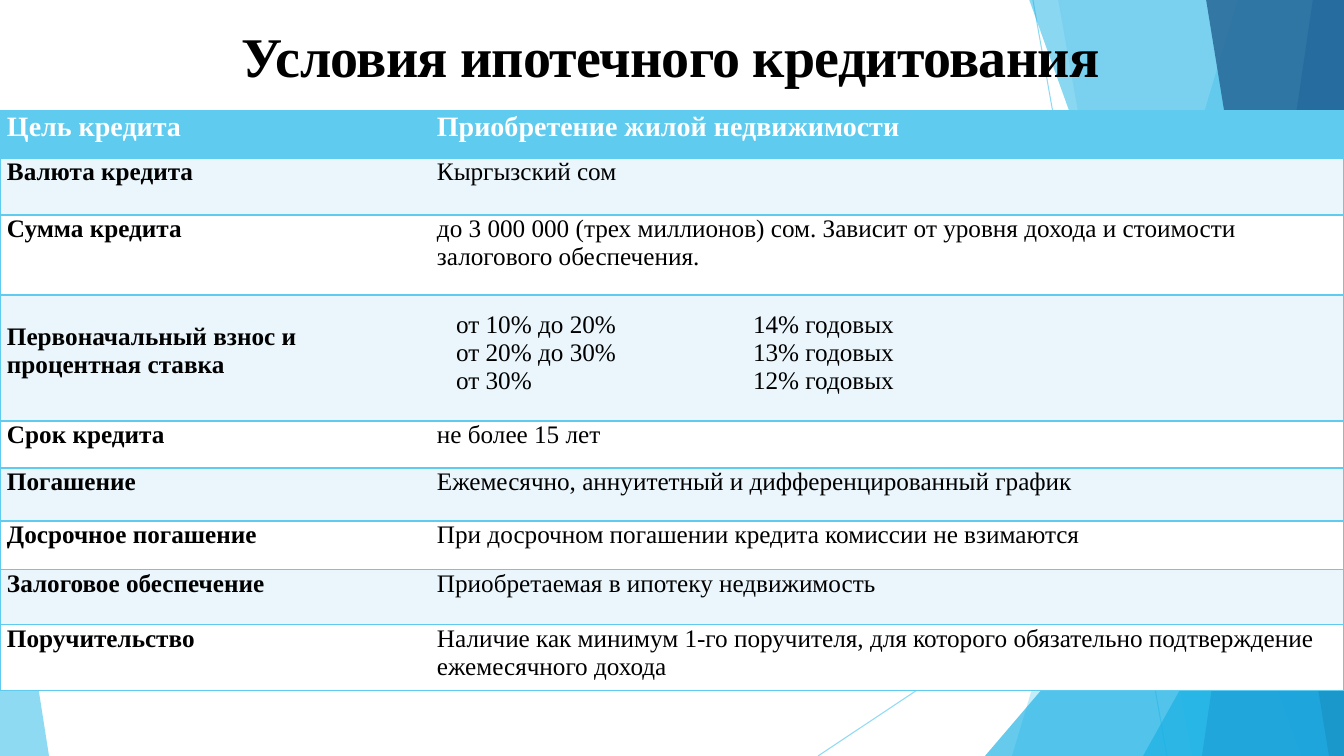
from lxml import etree
from pptx import Presentation
from pptx.dml.color import RGBColor
from pptx.enum.shapes import MSO_CONNECTOR, MSO_SHAPE
from pptx.enum.text import MSO_ANCHOR, PP_ALIGN
from pptx.oxml.ns import qn
from pptx.util import Emu, Pt

STRAIGHT = MSO_CONNECTOR.STRAIGHT
TRIANGLE = MSO_SHAPE.ISOSCELES_TRIANGLE
BOTTOM = MSO_ANCHOR.BOTTOM
LEFT, CENTER = PP_ALIGN.LEFT, PP_ALIGN.CENTER

WIDTH, HEIGHT = 1344, 756
EMU_PER_PX = 12192000 / WIDTH
FONT = "Times New Roman"
SKY, BLUE, BLACK, WHITE, PALE = "5FCBEF", "17B0E4", "000000", "FFFFFF", "EAF6FC"
NO_STYLE = "{2D5ABB26-0587-4C30-8999-92F81FD0307C}"
LABEL_WITH_GAP = "Первоначальный взнос и процентная ставка"

CONDITIONS = [
    (47, "Цель кредита", "Приобретение жилой недвижимости"),
    (57, "Валюта кредита", "Кыргызский сом"),
    (80, "Сумма кредита",
     "до 3 000 000 (трех миллионов) сом. Зависит от уровня дохода и стоимости залогового обеспечения."),
    (126, LABEL_WITH_GAP, ""),
    (47, "Срок кредита", "не более 15 лет"),
    (53, "Погашение", "Ежемесячно, аннуитетный и дифференцированный график"),
    (49, "Досрочное погашение", "При досрочном погашении кредита комиссии не взимаются"),
    (55, "Залоговое обеспечение", "Приобретаемая в ипотеку недвижимость"),
    (66, "Поручительство",
     "Наличие как минимум 1-го поручителя, для которого обязательно подтверждение ежемесячного дохода"),
]
RATES = ["от 10% до 20%\nот 20% до 30%\nот 30%", "14% годовых\n13% годовых\n12% годовых"]


def px(length):
    """Turn pixels into EMU."""
    return Emu(round(length * EMU_PER_PX))


def color(value):
    """Turn a hex string into a colour."""
    return RGBColor.from_string(value)


def write(frame, text, size=18, bold=False, ink=BLACK, align=LEFT, leading=None, tracking=None):
    """Fill a text frame, one paragraph per line of text."""
    frame.word_wrap = True
    for index, line in enumerate(text.split("\n")):
        para = frame.add_paragraph() if index else frame.paragraphs[0]
        para.alignment = align
        if leading:
            para.line_spacing = leading
        span = para.add_run()
        span.text = line
        span.font.name = FONT
        span.font.size = Pt(size)
        span.font.bold = bold
        span.font.color.rgb = color(ink)
        if tracking:
            span.font._element.set("spc", str(tracking))


def set_opacity(shape, percent):
    """Give every colour of a shape the same opacity."""
    for node in shape.element.spPr.iter(qn("a:srgbClr")):
        etree.SubElement(node, qn("a:alpha")).set("val", str(percent * 1000))


def paint(shape, fill, opacity):
    """Give a shape a translucent fill and no outline or shadow."""
    shape.shadow.inherit = False
    shape.fill.solid()
    shape.fill.fore_color.rgb = color(fill)
    shape.line.fill.background()
    set_opacity(shape, opacity)


def add_ray(page, x1, y1, x2, y2):
    """Draw a thin translucent line."""
    ray = page.shapes.add_connector(STRAIGHT, px(x1), px(y1), px(x2), px(y2))
    ray.line.color.rgb = color(SKY)
    ray.line.width = Pt(0.75)
    set_opacity(ray, 70)
    etree.SubElement(ray.element.spPr, qn("a:effectLst"))


def add_band(page, top_x, bottom_x, fill, opacity):
    """Draw a full-height band that reaches the right edge of the slide."""
    outline = page.shapes.build_freeform(px(top_x), px(-1))
    corners = [(WIDTH, -1), (WIDTH, HEIGHT), (bottom_x, HEIGHT)]
    outline.add_line_segments([(px(x), px(y)) for x, y in corners], close=True)
    paint(outline.convert_to_shape(), fill, opacity)


def add_corner(page, left, top, width, apex, fill, opacity):
    """Draw a right-angled triangle standing on the bottom edge."""
    corner = page.shapes.add_shape(TRIANGLE, px(left), px(top), px(width), px(HEIGHT - top))
    corner.adjustments[0] = apex
    paint(corner, fill, opacity)


def add_backdrop(page):
    """Draw the faceted decoration."""
    add_ray(page, 1033, 0, 1167, HEIGHT)
    add_ray(page, WIDTH, 406, 818, HEIGHT)
    add_band(page, 1238, 1012, SKY, 36)
    add_band(page, 1058, 1192, SKY, 20)
    add_corner(page, 985, 336, 359, 1, BLUE, 66)
    add_band(page, 1029, 1301, BLUE, 50)
    add_band(page, 1313, 1202, "2E83C3", 70)
    add_band(page, 1206, 1329, "226292", 80)
    add_corner(page, 1143, 396, 201, 1, BLUE, 66)
    add_corner(page, 0, 443, 49, 0, SKY, 70)


def add_title(page, left, top, width, height):
    """Place the title in front of the backdrop."""
    title = page.shapes.title
    title.left, title.top, title.width, title.height = map(px, (left, top, width, height))
    title.text_frame.vertical_anchor = BOTTOM
    write(title.text_frame, "Условия ипотечного кредитования", size=40, bold=True,
          align=CENTER, leading=0.85, tracking=-50)
    title.element.getparent().append(title.element)


def add_plain_table(page, left, top, widths, heights):
    """Add a table without a style."""
    frame = page.shapes.add_table(len(heights), len(widths), px(left), px(top),
                                  px(sum(widths)), px(sum(heights)))
    table = frame.table
    table.first_row = table.horz_banding = False
    table._tbl.tblPr.find(qn("a:tableStyleId")).text = NO_STYLE
    for column, width in zip(table.columns, widths):
        column.width = px(width)
    for row, height in zip(table.rows, heights):
        row.height = px(height)
    return table


def set_borders(cell, sides):
    """Draw the named borders of a cell, ahead of its fill."""
    properties = cell._tc.get_or_add_tcPr()
    for index, side in enumerate(sides):
        border = etree.Element(qn(f"a:ln{side}"), w=str(Pt(1)))
        fill = etree.SubElement(border, qn("a:solidFill"))
        etree.SubElement(fill, qn("a:srgbClr")).set("val", SKY)
        properties.insert(index, border)


def add_conditions(page, left, top, widths):
    """Place the table of loan conditions."""
    table = add_plain_table(page, left, top, widths, [row[0] for row in CONDITIONS])
    for row, (_, *texts) in enumerate(CONDITIONS):
        header = row == 0
        for column, text in enumerate(texts):
            cell = table.cell(row, column)
            cell.margin_left = cell.margin_right = px(7)
            cell.margin_top = px(28 if text == LABEL_WITH_GAP else 0)
            cell.margin_bottom = 0
            cell.fill.solid()
            cell.fill.fore_color.rgb = color(SKY if header else PALE if row % 2 else WHITE)
            set_borders(cell, "RTB" if column else "LTB")
            if text:
                write(cell.text_frame, text, size=20 if header else 18,
                      bold=header or column == 0, ink=WHITE if header else BLACK)


def add_rates(page, left, top, width, height):
    """Place the table of rates over its row of conditions."""
    table = add_plain_table(page, left, top, [width // 2] * 2, [height])
    for column, text in enumerate(RATES):
        cell = table.cell(0, column)
        cell.fill.background()
        write(cell.text_frame, text)


def main():
    """Build and save the deck."""
    deck = Presentation()
    deck.slide_width, deck.slide_height = px(WIDTH), px(HEIGHT)
    page = deck.slides.add_slide(deck.slide_layouts[5])
    add_backdrop(page)
    add_title(page, 186, 21, 969, 73)
    add_conditions(page, 0, 111, [430, 914])
    add_rates(page, 446, 306, 594, 90)
    deck.save("out.pptx")


if __name__ == "__main__":
    main()
